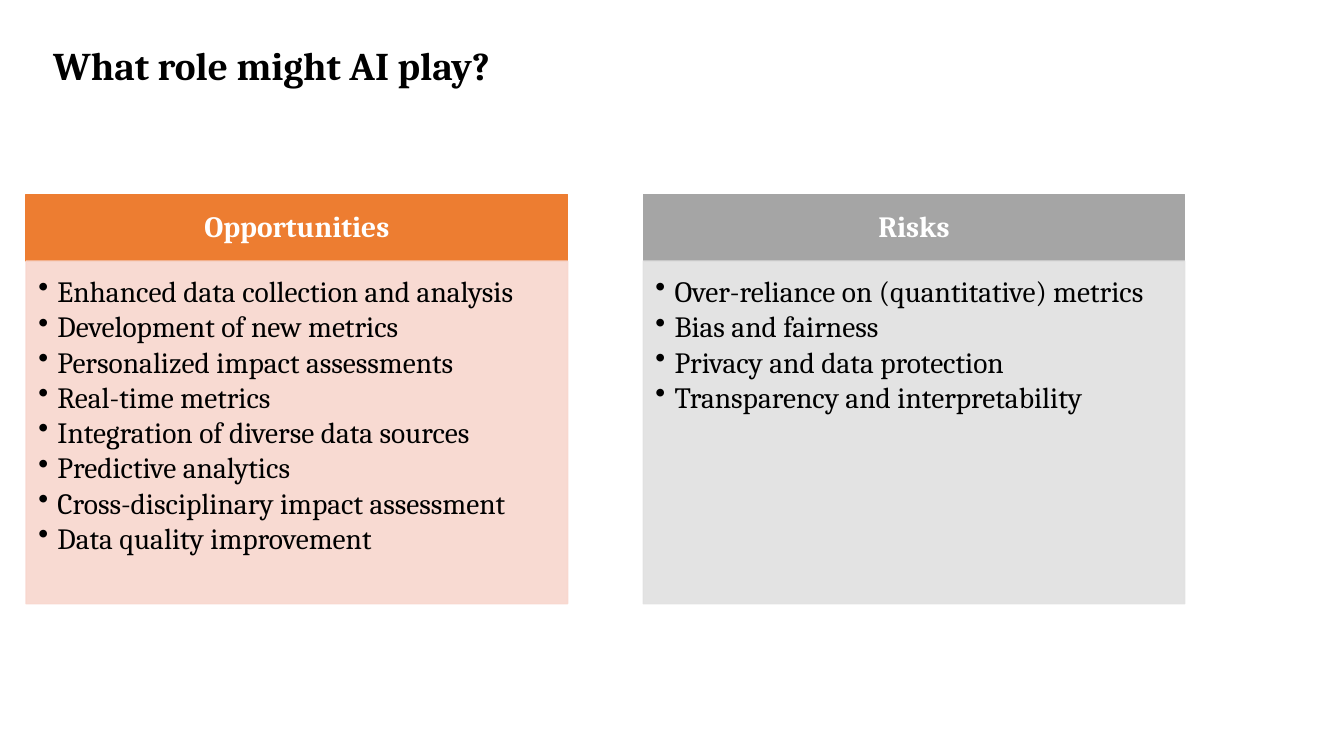
from lxml import etree
from pptx import Presentation
from pptx.dml.color import RGBColor
from pptx.enum.shapes import MSO_SHAPE
from pptx.enum.text import MSO_ANCHOR, PP_ALIGN
from pptx.oxml.ns import qn
from pptx.util import Inches, Pt

RECTANGLE = MSO_SHAPE.RECTANGLE
TOP, MIDDLE = MSO_ANCHOR.TOP, MSO_ANCHOR.MIDDLE
LEFT, CENTER = PP_ALIGN.LEFT, PP_ALIGN.CENTER

BLACK = RGBColor(0x00, 0x00, 0x00)
WHITE = RGBColor(0xFF, 0xFF, 0xFF)
ORANGE = RGBColor(0xED, 0x7D, 0x31)
PALE_ORANGE = RGBColor(0xF8, 0xD7, 0xCE)
GRAY = RGBColor(0xA5, 0xA5, 0xA5)
PALE_GRAY = RGBColor(0xE1, 0xE1, 0xE1)

FONT = "Cambria"
COLUMN_LEFT, COLUMN_STEP, COLUMN_WIDTH = 0.26, 6.12, 5.37
HEADER_TOP, HEADER_HEIGHT, BODY_HEIGHT = 1.93, 0.66, 3.4
BULLET_INDENT = Inches(0.19)

COLUMNS = [
    ("Opportunities", ORANGE, PALE_ORANGE, [
        "Enhanced data collection and analysis",
        "Development of new metrics",
        "Personalized impact assessments",
        "Real-time metrics",
        "Integration of diverse data sources",
        "Predictive analytics",
        "Cross-disciplinary impact assessment",
        "Data quality improvement",
    ]),
    ("Risks", GRAY, PALE_GRAY, [
        "Over-reliance on (quantitative) metrics",
        "Bias and fairness",
        "Privacy and data protection",
        "Transparency and interpretability",
    ]),
]


def set_opacity(shape, percent):
    """Make the fill and the outline partly transparent."""
    for color in shape._element.spPr.iter(qn("a:srgbClr")):
        etree.SubElement(color, qn("a:alpha"), val=str(percent * 1000))


def add_bullet(para):
    properties = para._p.get_or_add_pPr()
    properties.set("marL", str(BULLET_INDENT))
    properties.set("indent", str(-BULLET_INDENT))
    etree.SubElement(properties, qn("a:buChar"), char="•")


def write_lines(frame, lines, size=21, color=BLACK, bold=False, align=LEFT,
                bullets=False, spacing=None):
    frame.word_wrap = True
    for index, line in enumerate(lines):
        para = frame.add_paragraph() if index else frame.paragraphs[0]
        para.alignment = align
        para.line_spacing = spacing
        if bullets:
            add_bullet(para)
        span = para.add_run()
        span.text = line
        span.font.name = FONT
        span.font.size = Pt(size)
        span.font.bold = bold
        span.font.color.rgb = color


def add_panel(page, left, top, height, color, margins, anchor):
    """Add a filled column rectangle; margins run left, top, right, bottom."""
    panel = page.shapes.add_shape(RECTANGLE, Inches(left), Inches(top),
                                  Inches(COLUMN_WIDTH), Inches(height))
    panel.shadow.inherit = False
    panel.fill.solid()
    panel.fill.fore_color.rgb = color
    panel.line.color.rgb = color
    panel.line.width = Pt(1)
    frame = panel.text_frame
    frame.vertical_anchor = anchor
    (frame.margin_left, frame.margin_top,
     frame.margin_right, frame.margin_bottom) = map(Inches, margins)
    return panel


def add_column(page, left, heading, dark, pale, points):
    header = add_panel(page, left, HEADER_TOP, HEADER_HEIGHT, dark,
                       (0.16, 0.09, 0.16, 0.09), MIDDLE)
    write_lines(header.text_frame, [heading], color=WHITE, bold=True,
                align=CENTER, spacing=0.9)
    body = add_panel(page, left, HEADER_TOP + HEADER_HEIGHT, BODY_HEIGHT, pale,
                     (0.12, 0.12, 0.16, 0.18), TOP)
    set_opacity(body, 90)
    write_lines(body.text_frame, points, bullets=True)


def add_title(page, text):
    box = page.shapes.add_textbox(Inches(0.43), Inches(0.36),
                                  Inches(10.8), Inches(0.57))
    write_lines(box.text_frame, [text], size=28, bold=True)


def main():
    deck = Presentation()
    deck.slide_width, deck.slide_height = Inches(13.33), Inches(7.5)
    page = deck.slides.add_slide(deck.slide_layouts[6])
    for index, column in enumerate(COLUMNS):
        add_column(page, COLUMN_LEFT + index * COLUMN_STEP, *column)
    add_title(page, "What role might AI play?")
    deck.save("out.pptx")


if __name__ == "__main__":
    main()
